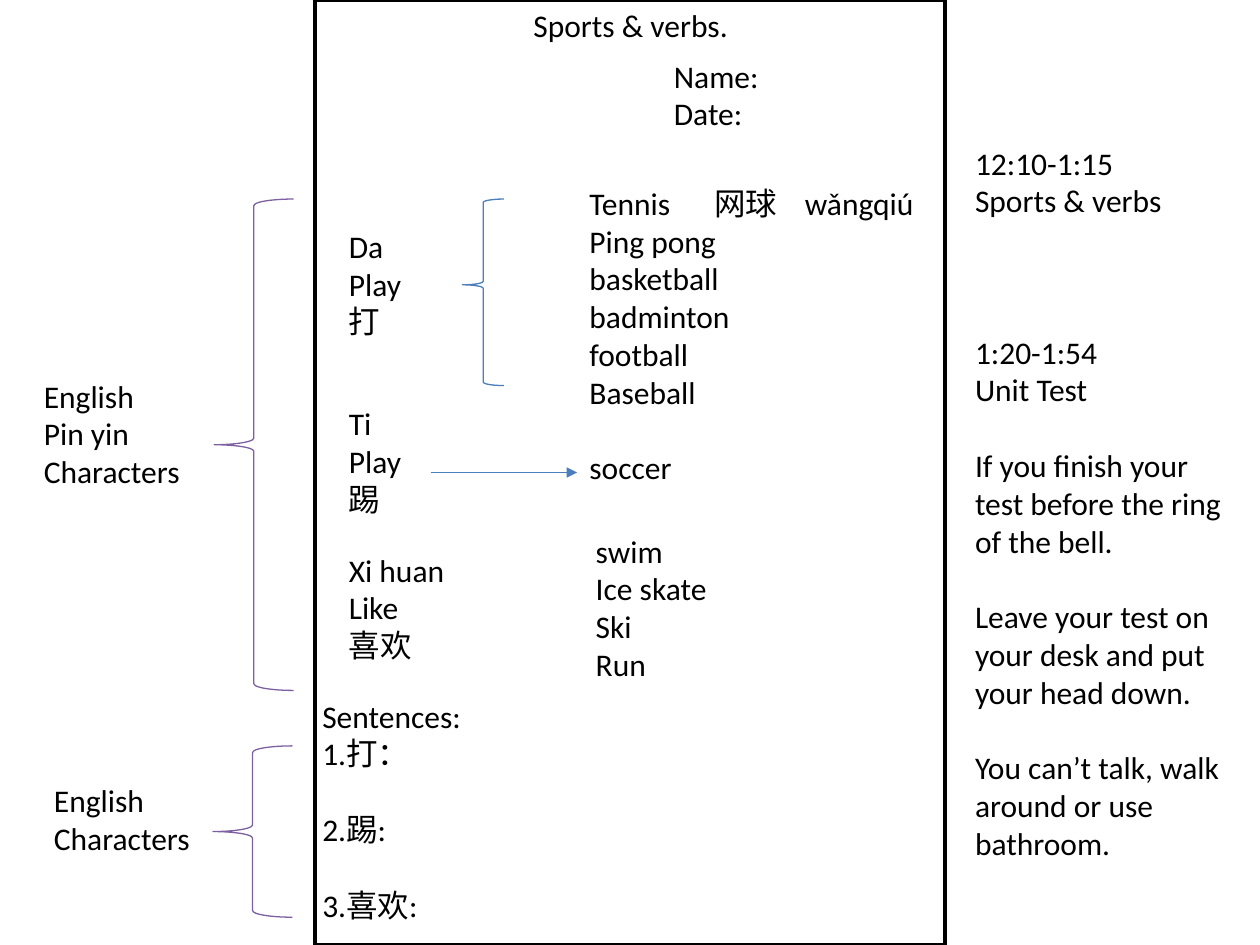
"""Builds a one-slide worksheet on sports and their Chinese verbs."""
import pptx
import pptx.dml.color
import pptx.enum.shapes
import pptx.enum.text
import pptx.oxml
import pptx.oxml.ns
import pptx.util

Inches = pptx.util.Inches
Pt = pptx.util.Pt
SHAPE = pptx.enum.shapes.MSO_SHAPE
COLORS = {"ink": "000000", "paper": "FFFFFF", "blue": "4B7EBC", "purple": "7D60A0"}
LINE_HEIGHT = 21.6
FRAME_FORMAT = {
    "word_wrap": True,
    "auto_size": pptx.enum.text.MSO_AUTO_SIZE.NONE,
    "vertical_anchor": pptx.enum.text.MSO_ANCHOR.TOP,
    "margin_left": Inches(0.1),
    "margin_right": Inches(0.1),
    "margin_top": Inches(0.05),
    "margin_bottom": Inches(0.05),
}


def rgb(name):
    return pptx.dml.color.RGBColor.from_string(COLORS[name])


def write(holder, lines, gaps=None):
    frame = holder.text_frame
    for name, value in FRAME_FORMAT.items():
        setattr(frame, name, value)
    for index, line in enumerate(lines):
        paragraph = frame.paragraphs[0] if index == 0 else frame.add_paragraph()
        paragraph.space_before = Pt(LINE_HEIGHT * (gaps or {}).get(index, 0))
        run = paragraph.add_run()
        run.text = line
        run.font.name = "Calibri"
        run.font.size = Pt(18)
        run.font.color.rgb = rgb("ink")
    return frame


deck = pptx.Presentation()
deck.slide_width, deck.slide_height = Inches(10), Inches(7.5)
slide = deck.slides.add_slide(deck.slide_layouts[5])
shapes = slide.shapes

heading = shapes.title
heading.left, heading.top, heading.width, heading.height = map(Inches, (3.42, 0, 3.17, 0.4))
heading_frame = write(heading, ["Sports & verbs."])
heading_frame.paragraphs[0].alignment = pptx.enum.text.PP_ALIGN.CENTER

page = shapes.add_shape(SHAPE.RECTANGLE, Inches(2.5), 0, Inches(5), Inches(7.5))
page.shadow.inherit = False
page.fill.solid()
page.fill.fore_color.rgb = rgb("paper")
page.line.color.rgb = rgb("ink")
page.line.width = Pt(2)
heading.element.addprevious(page.element)

blocks = [
    ((5.25, 0.4, 2.25, 1.01), ["Name:", "Date:"], {}),
    ((0.25, 2.94, 2.33, 1.62), ["English", "Pin yin", "Characters"], {}),
    ((2.67, 1.75, 0.75, 1.01), ["Da", "Play", "打"], {}),
    ((2.67, 3.16, 0.75, 1.01), ["Ti", "Play", "踢"], {}),
    ((4.63, 4.17, 5, 1.31), ["swim", "Ice skate", "Ski", "Run"], {}),
    ((2.67, 4.32, 0.99, 1.01), ["Xi huan", "Like", "喜欢"], {}),
    ((2.46, 5.48, 5.04, 1.92), ["Sentences:", "1.打：", "2.踢:", "3.喜欢:"], {2: 1, 3: 1}),
    ((0.33, 6.15, 2.33, 1.31), ["English", "Characters"], {}),
    ((7.64, 1.09, 2.33, 5.86), [
        "12:10-1:15",
        "Sports & verbs",
        "1:20-1:54",
        "Unit Test",
        "If you finish your test before the ring of the bell.",
        "Leave your test on your desk and put your head down.",
        "You can’t talk, walk around or use bathroom.",
    ], {2: 3, 4: 1, 5: 1, 6: 1}),
]
for place, lines, gaps in blocks:
    write(shapes.add_textbox(*map(Inches, place)), lines, gaps)

sports = shapes.add_textbox(*map(Inches, (4.58, 1.41, 5, 2.83)))
sports_frame = write(sports, [
    "Tennis\t网球\twǎngqiú", "Ping pong", "basketball", "badminton",
    "football", "Baseball", "soccer",
], {6: 1})
tab_stops = pptx.oxml.parse_xml(
    f'<a:tabLst {pptx.oxml.ns.nsdecls("a")}>'
    f'<a:tab pos="{Inches(0.99)}" algn="l"/><a:tab pos="{Inches(1.71)}" algn="l"/></a:tabLst>'
)
sports_frame.paragraphs[0]._p.get_or_add_pPr().append(tab_stops)

braces = [
    ((3.67, 1.58, 0.33, 1.48), "blue", 0.46),
    ((1.7, 1.58, 0.63, 3.9), "purple", 0.5),
    ((1.69, 5.92, 0.63, 1.36), "purple", 0.5),
]
for place, color, point in braces:
    brace = shapes.add_shape(SHAPE.LEFT_BRACE, *map(Inches, place))
    brace.shadow.inherit = False
    brace.adjustments[1] = point
    brace.fill.background()
    brace.line.color.rgb = rgb(color)
    brace.line.width = Pt(0.75)

soccer_arrow = shapes.add_connector(
    pptx.enum.shapes.MSO_CONNECTOR.STRAIGHT, *map(Inches, (3.42, 3.75, 4.58, 3.75))
)
soccer_arrow.line.color.rgb = rgb("blue")
soccer_arrow.line.width = Pt(0.75)
soccer_arrow.line._get_or_add_ln().append(
    pptx.oxml.parse_xml(f'<a:tailEnd {pptx.oxml.ns.nsdecls("a")} type="triangle"/>')
)
soccer_arrow.element.spPr.append(
    pptx.oxml.parse_xml(f'<a:effectLst {pptx.oxml.ns.nsdecls("a")}/>')
)

deck.save("out.pptx")
